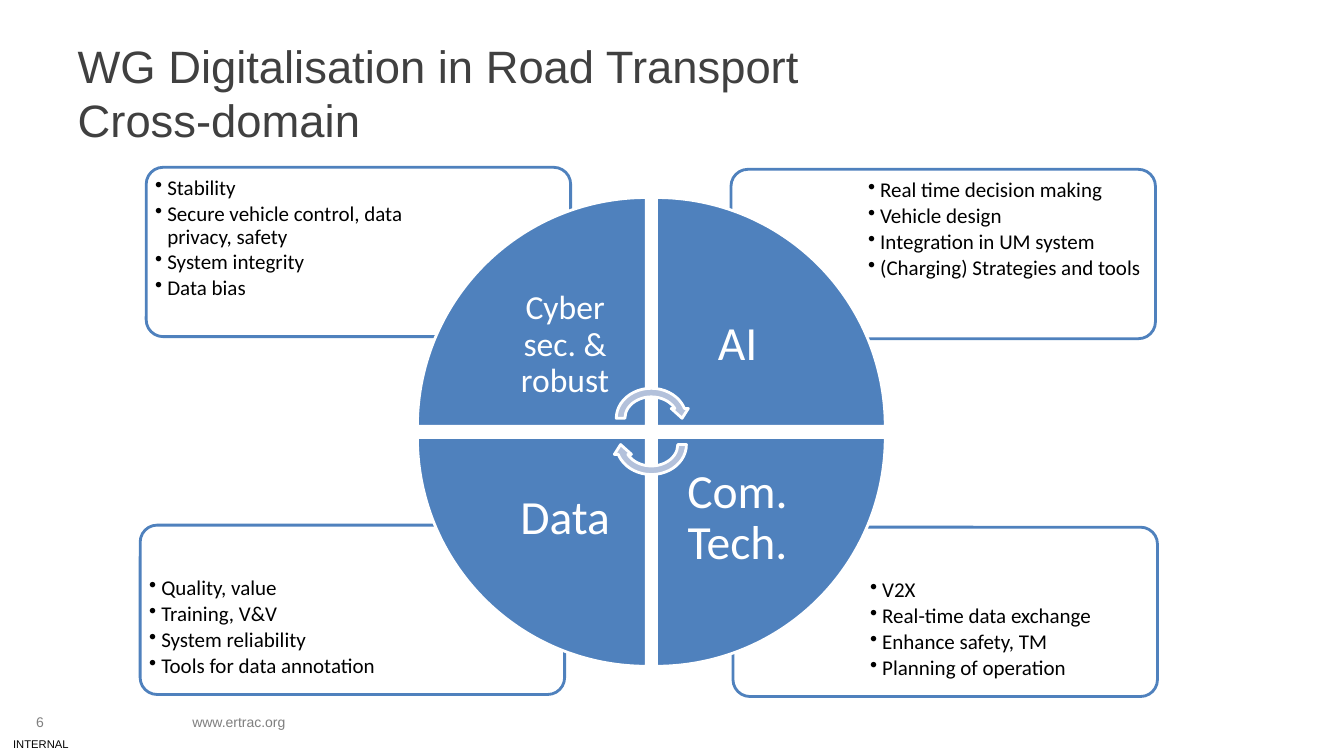
from lxml import etree
from pptx import Presentation
from pptx.dml.color import RGBColor
from pptx.enum.shapes import MSO_SHAPE as Shape
from pptx.enum.text import MSO_ANCHOR as Anchor, MSO_AUTO_SIZE as Auto, PP_ALIGN as Align
from pptx.oxml.ns import qn
from pptx.util import Inches, Pt

WHITE = RGBColor(0xFF, 0xFF, 0xFF)
BLACK = RGBColor(0, 0, 0)
BLUE = RGBColor(0x4F, 0x81, 0xBD)
PALE = RGBColor(0xB3, 0xC1, 0xDB)
DARK = RGBColor(0x40, 0x40, 0x40)
GREY = RGBColor(0x7F, 0x7F, 0x7F)
SILVER = RGBColor(0x80, 0x80, 0x80)

deck = Presentation()
deck.slide_width = Inches(13.33)
deck.slide_height = Inches(7.5)
slide = deck.slides.add_slide(deck.slide_layouts[5])


def draw(kind, left, top, width, height, fill, line, turn=0):
    shape = slide.shapes.add_shape(kind, Inches(left), Inches(top), Inches(width), Inches(height))
    shape.shadow.inherit = False
    shape.fill.solid()
    shape.fill.fore_color.rgb = fill
    shape.line.color.rgb = line
    shape.line.width = Pt(2)
    shape.rotation = turn
    return shape


def write(left, top, width, height, lines, size, face, color, pad=None, anchor=Anchor.TOP):
    box = slide.shapes.add_textbox(Inches(left), Inches(top), Inches(width), Inches(height))
    frame = box.text_frame
    frame.word_wrap = True
    frame.vertical_anchor = anchor
    if pad is not None:
        frame.margin_left = frame.margin_right = Inches(pad)
        frame.margin_top = frame.margin_bottom = Inches(pad)
    for i, line in enumerate(lines):
        para = frame.paragraphs[0] if i == 0 else frame.add_paragraph()
        run = para.add_run()
        run.text = line
        run.font.size = Pt(size)
        run.font.name = face
        run.font.color.rgb = color
    return frame


title = slide.shapes.title
title.left, title.top = Inches(0.67), Inches(0.29)
title.width, title.height = Inches(12), Inches(1.25)
head = title.text_frame
head.auto_size = Auto.NONE
head.vertical_anchor = Anchor.MIDDLE
para = head.paragraphs[0]
para.alignment = Align.LEFT
para.font.size = Pt(32.4)
for i, line in enumerate(["WG Digitalisation in Road Transport", "Cross-domain"]):
    if i:
        para.add_line_break()
    run = para.add_run()
    run.text = line
    run.font.size = Pt(32.4)
    run.font.name = "Arial"
    run.font.color.rgb = DARK

panels = [
    (7.27, 5.23, 1.3, 0.46,
     ["V2X", "Real-time data exchange", "Enhance safety, TM", "Planning of operation"]),
    (1.39, 5.21, 0.03, 0.46,
     ["Quality, value", "Training, V&V", "System reliability", "Tools for data annotation"]),
    (7.25, 1.68, 1.3, 0.04,
     ["Real time decision making", "Vehicle design", "Integration in UM system",
      "(Charging) Strategies and tools"]),
    (1.45, 1.66, 0.03, 0.04,
     ["Stability", "Secure vehicle control, data privacy, safety", "System integrity", "Data bias"]),
]
for left, top, dx, dy, items in panels:
    panel = draw(Shape.ROUNDED_RECTANGLE, left, top, 4.21, 1.68, WHITE, BLUE)
    panel.adjustments[0] = 0.1
    tint = panel.fill._xPr.find(qn("a:solidFill"))[0]
    etree.SubElement(tint, qn("a:alpha"), val="90000")
    frame = write(left + dx, top + dy, 2.87, 1.19, items, 15, "Calibri", BLACK, 0.06)
    for para in frame.paragraphs:
        props = para._p.get_or_add_pPr()
        props.set("marL", str(Inches(0.12)))
        props.set("indent", str(-Inches(0.12)))
        etree.SubElement(props, qn("a:buChar"), char="•")
        para.level = 1
        para.line_spacing = 0.9
        para.space_after = Pt(2.25)

wedges = [
    (4.14, 1.96, 0, "Cyber sec. & robust", 24, 0.19),
    (6.51, 1.96, 90, "AI", 34, 0.26),
    (6.51, 4.34, 180, "Com. Tech.", 34, 0.26),
    (4.14, 4.34, 270, "Data", 34, 0.26),
]
for left, top, turn, label, size, pad in wedges:
    draw(Shape.PIE_WEDGE, left, top, 2.27, 2.27, BLUE, WHITE, turn)
    dx = 0.66 if left < 5 else 0
    dy = 0.66 if top < 3 else 0
    frame = write(left + dx, top + dy, 1.61, 1.61, [label], size, "Calibri", WHITE, pad,
                  Anchor.MIDDLE)
    frame.paragraphs[0].alignment = Align.CENTER
    frame.paragraphs[0].line_spacing = 0.9

for top, turn in [(3.81, 0), (4.07, 180)]:
    draw(Shape.CIRCULAR_ARROW, 6.07, top, 0.78, 0.68, PALE, WHITE, turn)

write(0.26, 7.03, 0.67, 0.4, ["6"], 10, "Arial", SILVER)
write(1.81, 7.03, 1.66, 0.4, ["www.ertrac.org"], 10, "Arial", GREY)
mark = write(0, 7.26, 0.81, 0.24, ["INTERNAL"], 8, "Arial", BLACK, 0, Anchor.MIDDLE)
mark.margin_left = Inches(0.13)

deck.save("out.pptx")
